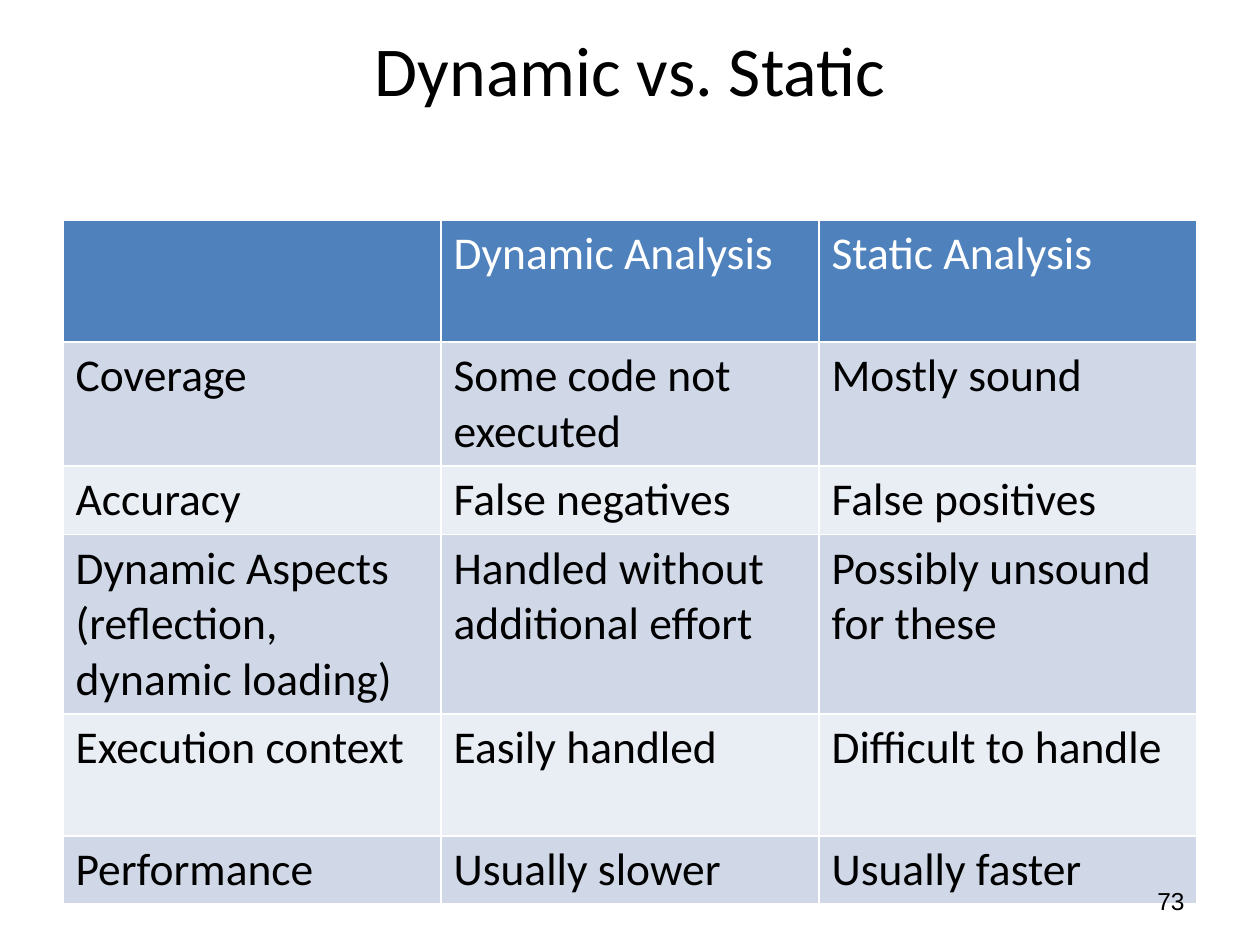
from pptx import Presentation
from pptx import util as u
from pptx.dml.color import RGBColor
from pptx.enum import text

TITLE = "Dynamic vs. Static"
PAGE_NUMBER = "73"
COMPARISON = [
    ("", "Dynamic Analysis", "Static Analysis"),
    ("Coverage", "Some code not executed", "Mostly sound"),
    ("Accuracy", "False negatives", "False positives"),
    ("Dynamic Aspects (reflection, dynamic loading)",
     "Handled without additional effort", "Possibly unsound for these"),
    ("Execution context", "Easily handled", "Difficult to handle"),
    ("Performance", "Usually slower", "Usually faster"),
]
ROW_HEIGHTS = [122, 122, 67, 176, 122, 67]
COLUMN_WIDTH = 378

THEME = {
    "header": "4F81BD",
    "bands": ("D0D8E8", "E9EDF4"),
    "title": {"name": "Calibri", "size": u.Pt(40), "color": "000000"},
    "heading": {"name": "Calibri", "size": u.Pt(26), "bold": False, "color": "FFFFFF"},
    "body": {"name": "Calibri", "size": u.Pt(26), "bold": False, "color": "000000"},
    "number": {"name": "Arial", "size": u.Pt(14), "color": "000000"},
}


def px(length):
    return u.Emu(round(length * 914400 / 126))


def place(shape, left, top, width, height):
    shape.left, shape.top, shape.width, shape.height = map(px, (left, top, width, height))


def write(frame, content, style, alignment):
    paragraph = frame.paragraphs[0]
    paragraph.alignment = alignment
    run = paragraph.add_run()
    run.text = content
    for name, value in style.items():
        if name == "color":
            run.font.color.rgb = RGBColor.from_string(value)
        else:
            setattr(run.font, name, value)


def add_title(slide):
    title = slide.shapes.title
    place(title, 63, -10, 1134, 158)
    title.text_frame.vertical_anchor = text.MSO_ANCHOR.MIDDLE
    write(title.text_frame, TITLE, THEME["title"], text.PP_ALIGN.CENTER)


def add_comparison(slide):
    columns = len(COMPARISON[0])
    bounds = map(px, (63, 220, COLUMN_WIDTH * columns, sum(ROW_HEIGHTS)))
    table = slide.shapes.add_table(len(COMPARISON), columns, *bounds).table
    for column in table.columns:
        column.width = px(COLUMN_WIDTH)
    for index, (labels, height) in enumerate(zip(COMPARISON, ROW_HEIGHTS)):
        table.rows[index].height = px(height)
        fill = THEME["bands"][(index - 1) % 2] if index else THEME["header"]
        style = THEME["body" if index else "heading"]
        for cell, label in zip(table.rows[index].cells, labels):
            cell.fill.solid()
            cell.fill.fore_color.rgb = RGBColor.from_string(fill)
            if label:
                write(cell.text_frame, label, style, text.PP_ALIGN.LEFT)


def add_page_number(slide):
    box = slide.shapes.add_textbox(*map(px, (903, 876, 294, 50)))
    box.text_frame.word_wrap = True
    box.text_frame.vertical_anchor = text.MSO_ANCHOR.MIDDLE
    write(box.text_frame, PAGE_NUMBER, THEME["number"], text.PP_ALIGN.RIGHT)


def main():
    presentation = Presentation()
    presentation.slide_width, presentation.slide_height = px(1260), px(945)
    slide = presentation.slides.add_slide(presentation.slide_layouts.get_by_name("Title Only"))
    add_title(slide)
    add_comparison(slide)
    add_page_number(slide)
    presentation.save("out.pptx")


if __name__ == "__main__":
    main()
